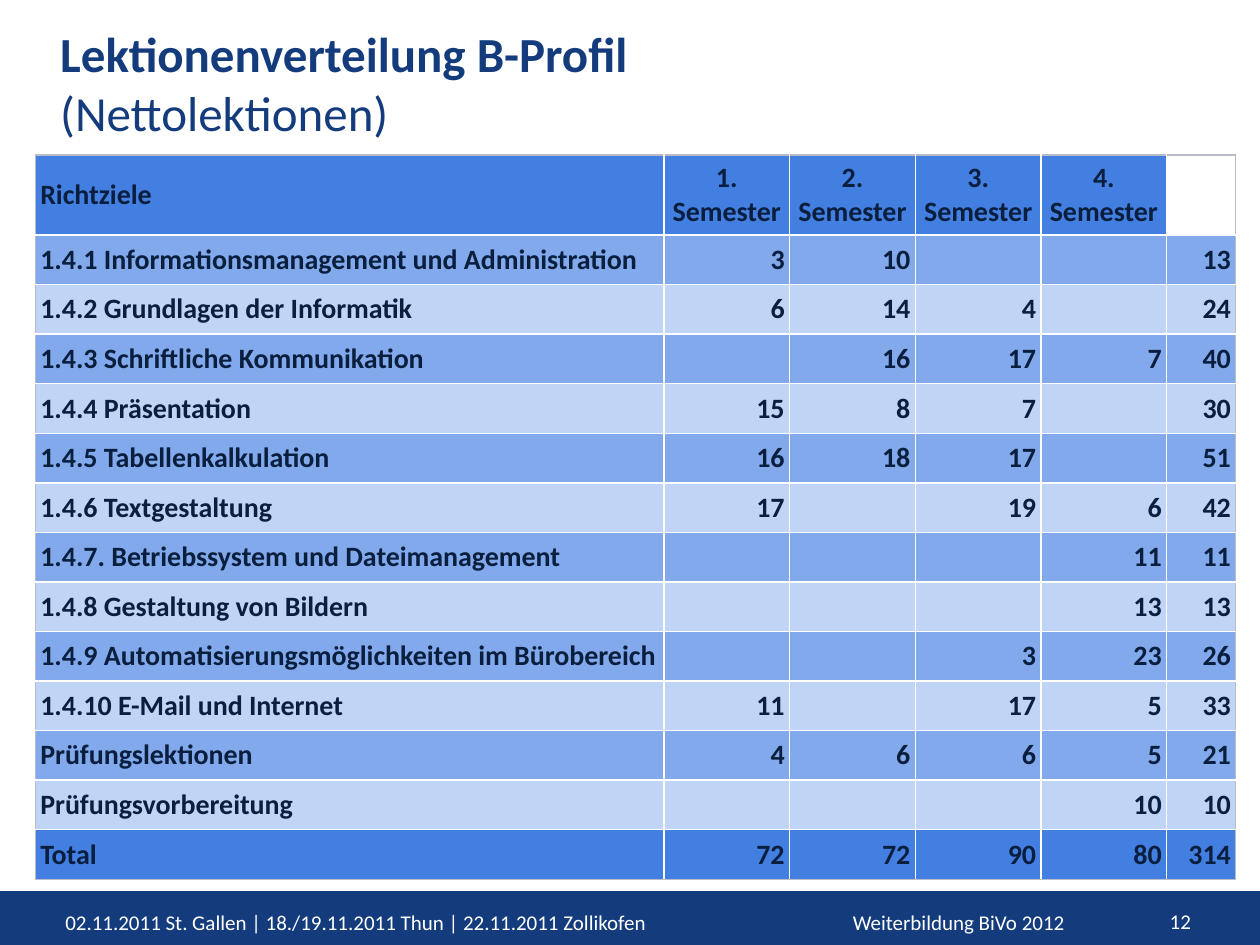
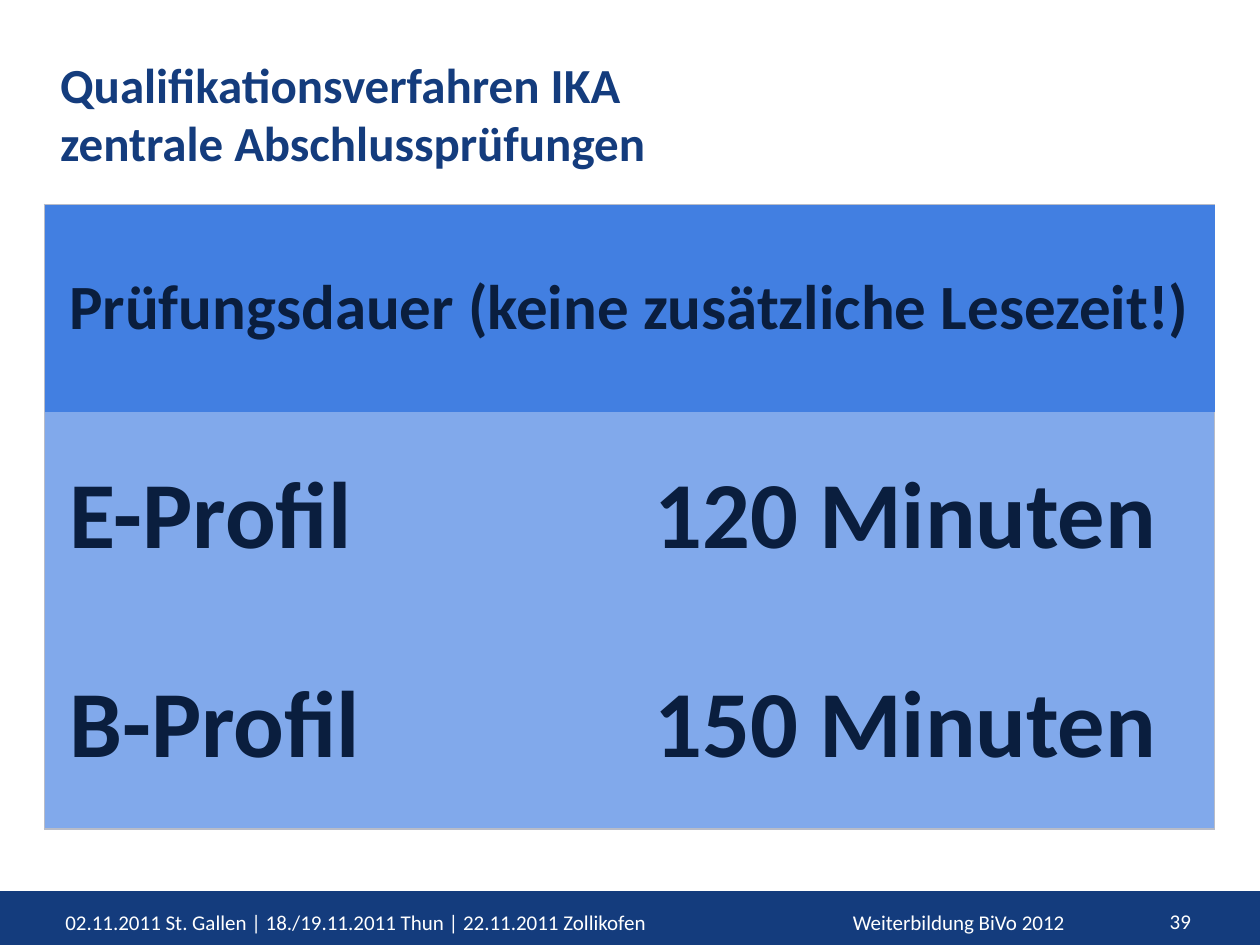
from dataclasses import dataclass

from lxml import etree
from pptx import Presentation
from pptx.dml.color import RGBColor
from pptx.enum.shapes import MSO_SHAPE
from pptx.enum.text import MSO_ANCHOR, PP_ALIGN
from pptx.oxml.ns import qn
from pptx.util import Inches, Pt

LEFT, CENTER, RIGHT = PP_ALIGN.LEFT, PP_ALIGN.CENTER, PP_ALIGN.RIGHT
TOP, MIDDLE = MSO_ANCHOR.TOP, MSO_ANCHOR.MIDDLE
RECTANGLE = MSO_SHAPE.RECTANGLE


@dataclass(frozen=True)
class Theme:
    """Colours, font and type sizes of the deck."""
    navy: str = "143C7D"
    ink: str = "0A1E3E"
    white: str = "FFFFFF"
    strong: str = "427FE1"
    medium: str = "81A9EB"
    pale: str = "C0D4F5"
    frame: str = "B8BCC8"
    font: str = "Calibri"
    title: int = 28
    footer: int = 12
    lessons: int = 16
    exam_head: int = 36
    exam_body: int = 54


@dataclass(frozen=True)
class CellStyle:
    """Look of one table cell."""
    fill: str
    size: int
    align: PP_ALIGN = LEFT
    margins: tuple = (0, 0, 0, 0)


class Deck:
    """Builds slides on a grid of 100 columns by 75 rows."""

    COLS, ROWS = 100, 75

    def __init__(self, theme):
        self.theme = theme
        self.prs = Presentation()
        self.prs.slide_width, self.prs.slide_height = Inches(10), Inches(7.5)
        self.s = None

    def box(self, col, row, cols, rows):
        """Turn grid units into slide lengths."""
        x, y = self.prs.slide_width / self.COLS, self.prs.slide_height / self.ROWS
        return round(col * x), round(row * y), round(cols * x), round(rows * y)

    def slide(self, number):
        """Start a slide with its footer band."""
        t = self.theme
        self.s = self.prs.slides.add_slide(self.prs.slide_layouts[6])
        self.band(0, 70.8, 100, 4.2)
        for area, text, align in (
            ((4.2, 71.7, 60.8, 3.2), "02.11.2011 St. Gallen | 18./19.11.2011 Thun | 22.11.2011 Zollikofen", LEFT),
            ((66.7, 71.7, 23.3, 3.3), "Weiterbildung BiVo 2012", LEFT),
            ((90, 71.6, 5.5, 3.4), str(number), RIGHT),
        ):
            self.text(area, [(text, False)], t.footer, t.white, align)

    def band(self, *area):
        """Draw a navy rectangle."""
        sp = self.s.shapes.add_shape(RECTANGLE, *self.box(*area))
        sp.shadow.inherit = False
        sp.fill.solid()
        sp.fill.fore_color.rgb = RGBColor.from_string(self.theme.navy)
        sp.line.color.rgb = RGBColor.from_string(self.theme.navy)
        sp.line.width = Pt(0.75)

    def add_lines(self, tf, lines, size, color, align):
        """Fill a text frame with (text, bold) lines in one paragraph."""
        p = tf.paragraphs[0]
        p.alignment = align
        p.font.size = Pt(size)
        for i, (text, bold) in enumerate(lines):
            if i:
                p.add_line_break()
            r = p.add_run()
            r.text = text
            r.font.name, r.font.size, r.font.bold = self.theme.font, Pt(size), bold
            r.font.color.rgb = RGBColor.from_string(color)

    def text(self, area, lines, size, color, align=LEFT):
        """Place a wrapped text box."""
        tf = self.s.shapes.add_textbox(*self.box(*area)).text_frame
        tf.word_wrap = True
        tf.vertical_anchor = TOP
        self.add_lines(tf, lines, size, color, align)

    def title(self, row, *lines):
        """Place the slide title."""
        self.text((3.8, row, 73, 9.3), lines, self.theme.title, self.theme.navy)

    def border(self, cell, side, line):
        """Set one cell edge to (colour, points) or to none."""
        ln = etree.SubElement(cell._tc.get_or_add_tcPr(), qn(f"a:ln{side}"))
        if line is None:
            ln.set("w", "0")
            etree.SubElement(ln, qn("a:noFill"))
            return
        color, points = line
        ln.set("w", str(Pt(points)))
        fill = etree.SubElement(ln, qn("a:solidFill"))
        etree.SubElement(fill, qn("a:srgbClr"), val=color)

    def table(self, area, col_shares, row_shares, data, style_of, inner=None):
        """Place a framed table; style_of gives the look of a row and column."""
        x, y, w, h = self.box(*area)
        n_rows, n_cols = len(row_shares), len(col_shares)
        tbl = self.s.shapes.add_table(n_rows, n_cols, x, y, w, h).table
        for col, share in zip(tbl.columns, col_shares):
            col.width = round(w * share / sum(col_shares))
        for row, share in zip(tbl.rows, row_shares):
            row.height = round(h * share / sum(row_shares))
        outer = (self.theme.frame, 0.75)
        for i, values in enumerate(data):
            for j, value in enumerate(values):
                cell, style = tbl.cell(i, j), style_of(i, j)
                edges = {"L": j == 0, "R": j == n_cols - 1, "T": i == 0, "B": i == n_rows - 1}
                for side, outside in edges.items():
                    self.border(cell, side, outer if outside else inner)
                cell.fill.solid()
                cell.fill.fore_color.rgb = RGBColor.from_string(style.fill)
                cell.vertical_anchor = MIDDLE
                (cell.margin_left, cell.margin_top,
                 cell.margin_right, cell.margin_bottom) = map(Inches, style.margins)
                lines = [(part, True) for part in str(value).split("\n") if part]
                self.add_lines(cell.text_frame, lines, style.size, self.theme.ink, style.align)
        return tbl


LESSONS = [
    ["Richtziele", *(f"{n}.\nSemester" for n in range(1, 5)), ""],
    ["1.4.1 Informationsmanagement und Administration", 3, 10, "", "", 13],
    ["1.4.2 Grundlagen der Informatik", 6, 14, 4, "", 24],
    ["1.4.3 Schriftliche Kommunikation", "", 16, 17, 7, 40],
    ["1.4.4 Präsentation", 15, 8, 7, "", 30],
    ["1.4.5 Tabellenkalkulation", 16, 18, 17, "", 51],
    ["1.4.6 Textgestaltung", 17, "", 19, 6, 42],
    ["1.4.7. Betriebssystem und Dateimanagement", "", "", "", 11, 11],
    ["1.4.8 Gestaltung von Bildern", "", "", "", 13, 13],
    ["1.4.9 Automatisierungsmöglichkeiten im Bürobereich", "", "", 3, 23, 26],
    ["1.4.10 E-Mail und Internet", 11, "", 17, 5, 33],
    ["Prüfungslektionen", 4, 6, 6, 5, 21],
    ["Prüfungsvorbereitung", "", "", "", 10, 10],
    ["Total", 72, 72, 90, 80, 314],
]

EXAMS = [
    ["Prüfungsdauer (keine zusätzliche Lesezeit!)", ""],
    ["E-Profil", "120 Minuten"],
    ["B-Profil", "150 Minuten"],
]


def lessons_slide(deck):
    """Lessons per goal and semester."""
    t = deck.theme
    last_row, last_col = len(LESSONS) - 1, len(LESSONS[0]) - 1

    def style_of(i, j):
        if (i, j) == (0, last_col):
            fill = t.white
        elif i in (0, last_row):
            fill = t.strong
        else:
            fill = t.medium if i % 2 else t.pale
        if j == 0:
            return CellStyle(fill, t.lessons, LEFT, (0.04, 0, 0.01, 0))
        if i == 0:
            return CellStyle(fill, t.lessons, CENTER)
        return CellStyle(fill, t.lessons, RIGHT, (0, 0, 0.04, 0))

    deck.slide(12)
    deck.title(1.4, ("Lektionenverteilung B-Profil", True), ("(Nettolektionen)", False))
    deck.table((2.8, 12.3, 95.3, 57.5), [5, 1, 1, 1, 1, 0.55], [0.63] + [0.39] * last_row,
               LESSONS, style_of, inner=(t.white, 1))


def exams_slide(deck):
    """Length of the final exams."""
    t = deck.theme

    def style_of(i, j):
        fill, size = (t.medium, t.exam_body) if i else (t.strong, t.exam_head)
        return CellStyle(fill, size, LEFT, (0.2, 0.05, 0.1, 0.05))

    deck.slide(39)
    deck.title(3.8, ("Qualifikationsverfahren IKA", True), ("zentrale Abschlussprüfungen", True))
    tbl = deck.table((3.5, 16.2, 92.9, 49.6), [1, 1], [1, 1, 1], EXAMS, style_of)
    tbl.cell(0, 0).merge(tbl.cell(0, 1))


def main():
    """Build and save the deck."""
    deck = Deck(Theme())
    lessons_slide(deck)
    exams_slide(deck)
    deck.prs.save("out.pptx")


if __name__ == "__main__":
    main()
